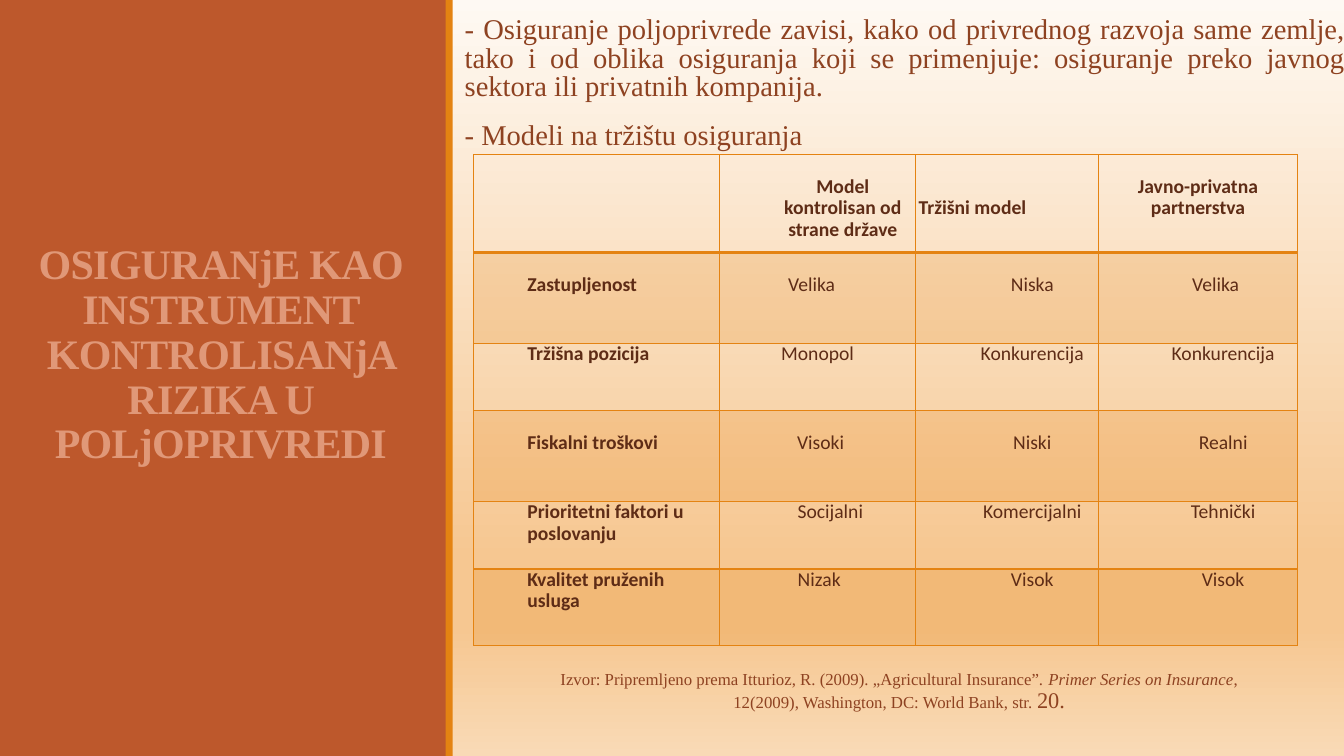
from copy import deepcopy
from dataclasses import dataclass

from lxml import etree
from pptx import Presentation
from pptx.dml.color import RGBColor
from pptx.enum import shapes, text
from pptx.oxml.ns import qn
from pptx.util import Cm, Pt


@dataclass(frozen=True)
class Theme:
    rust: str = "BD582C"
    orange: str = "E48312"
    title: str = "E09878"
    body: str = "8E4221"
    cell: str = "5E2C16"
    gradient: tuple = ((0, "FEF9F3"), (74, "F6C791"), (83, "F6C791"), (100, "F9DAB6"))
    serif: str = "Times New Roman"
    sans: str = "Calibri"
    title_size: float = 30
    body_size: float = 20.4
    source_size: float = 12
    page_size: float = 16
    cell_size: float = 14


@dataclass(frozen=True)
class Area:
    left: float
    top: float
    width: float
    height: float


@dataclass(frozen=True)
class Entry:
    """Cell wording; shift moves its centring area right (or left), in cm."""
    words: str
    shift: float = 1.27
    lines_above: int = 0
    align: text.PP_ALIGN = text.PP_ALIGN.CENTER


THEME = Theme()
LEFT, CENTER = text.PP_ALIGN.LEFT, text.PP_ALIGN.CENTER
CELL_MARGIN = 0.08
LINE_HEIGHT = 0.54
COLUMNS = (6.2, 4.93, 4.62, 5.0)
ROW_HEIGHTS = (2.46, 2.29, 1.7, 2.29, 1.7, 1.93)
PANELS = (
    (Area(0, 0, 11.25, 19.05), THEME.rust),
    (Area(11.23, 0, 0.18, 19.05), THEME.orange),
)


def label(words: str, lines_above: int = 0) -> Entry:
    return Entry(words, 1.27, lines_above, LEFT)


MODELS = (
    (Entry(""), Entry("Model kontrolisan od strane države", 1.27, 1),
     Entry("Tržišni model", 0, 2, LEFT), Entry("Javno-privatna partnerstva", 0, 1)),
    (label("Zastupljenost", 1), Entry("Velika", -0.3, 1),
     Entry("Niska", lines_above=1), Entry("Velika", 0.89, 1)),
    (label("Tržišna pozicija"), Entry("Monopol", 0),
     Entry("Konkurencija"), Entry("Konkurencija")),
    (label("Fiskalni troškovi", 1), Entry("Visoki", 0.15, 1),
     Entry("Niski", lines_above=1), Entry("Realni", lines_above=1)),
    (label("Prioritetni faktori u poslovanju"), Entry("Socijalni", 0.64),
     Entry("Komercijalni"), Entry("Tehnički")),
    (label("Kvalitet pruženih usluga"), Entry("Nizak", 0.08),
     Entry("Visok"), Entry("Visok")),
)


def rgb(color: str) -> RGBColor:
    return RGBColor.from_string(color)


def paint_background(page) -> None:
    fill = page.background.fill
    fill.gradient()
    fill.gradient_angle = 270
    stops = page.element.find(".//" + qn("a:gsLst"))
    pattern = deepcopy(stops[0])
    for stop in list(stops):
        stops.remove(stop)
    for position, color in THEME.gradient:
        stop = deepcopy(pattern)
        stop.set("pos", str(position * 1000))
        for child in list(stop):
            stop.remove(child)
        etree.SubElement(stop, qn("a:srgbClr"), val=color)
        stops.append(stop)


def place(box, area: Area) -> None:
    box.left, box.top = Cm(area.left), Cm(area.top)
    box.width, box.height = Cm(area.width), Cm(area.height)


def add_panel(page, area: Area, color: str) -> None:
    """Put a plain rectangle behind the placeholders."""
    panel = page.shapes.add_shape(
        shapes.MSO_SHAPE.RECTANGLE,
        Cm(area.left), Cm(area.top), Cm(area.width), Cm(area.height))
    panel.shadow.inherit = False
    panel.fill.solid()
    panel.fill.fore_color.rgb = rgb(color)
    panel.line.fill.background()
    page.shapes.title.element.addprevious(panel.element)


def style_font(font, name: str, size: float, color: str, bold: bool = False) -> None:
    font.name, font.size, font.bold = name, Pt(size), bold
    font.color.rgb = rgb(color)


def format_body(para, align: text.PP_ALIGN, spacing: float, indent: float, size: float) -> None:
    para.alignment, para.line_spacing = align, spacing
    para.space_before, para.space_after = Pt(12), Pt(2)
    properties = para._p.get_or_add_pPr()
    properties.set("marL", str(Cm(indent)))
    properties.set("indent", "0")
    etree.SubElement(properties, qn("a:buNone"))
    style_font(para.font, THEME.serif, size, THEME.body)


def open_frame(box, area: Area, anchor: text.MSO_ANCHOR):
    place(box, area)
    frame = box.text_frame
    frame.word_wrap, frame.auto_size = True, text.MSO_AUTO_SIZE.NONE
    frame.vertical_anchor = anchor
    return frame


def write_title(box) -> None:
    frame = open_frame(box, Area(0, -0.86, 11.13, 12.78), text.MSO_ANCHOR.BOTTOM)
    para = frame.paragraphs[0]
    span = para.add_run()
    span.text = "OSIGURANjE KAO INSTRUMENT KONTROLISANjA RIZIKA U POLjOPRIVREDI"
    para.alignment, para.line_spacing = CENTER, 0.89
    style_font(para.font, THEME.serif, THEME.title_size, THEME.title, True)
    span.font._element.set("spc", "-50")


def write_introduction(box) -> None:
    frame = open_frame(box, Area(11.46, 0.28, 22.43, 3.63), text.MSO_ANCHOR.TOP)
    frame.margin_left = frame.margin_right = 0
    frame.text = (
        "- Osiguranje poljoprivrede zavisi, kako od privrednog razvoja same zemlje, "
        "tako i od oblika osiguranja koji se primenjuje: osiguranje preko javnog "
        "sektora ili privatnih kompanija.\n- Modeli na tržištu osiguranja")
    for para, align in zip(frame.paragraphs, (text.PP_ALIGN.JUSTIFY, LEFT)):
        format_body(para, align, 0.84, 0.25, THEME.body_size)


def write_source(box) -> None:
    frame = open_frame(box, Area(13.72, 16.79, 17.88, 3.33), text.MSO_ANCHOR.TOP)
    para = frame.paragraphs[0]
    format_body(para, CENTER, 0.9, 0, THEME.source_size)
    citation = (
        "Izvor: Pripremljeno prema Itturioz, R. (2009). „Agricultural Insurance”. ",
        "Primer Series on Insurance",
        ", 12(2009), Washington, DC: World Bank, str. ",
        "20.",
    )
    for words in citation:
        para.add_run().text = words
    para.runs[1].font.italic = True
    para.runs[3].font.size = Pt(THEME.page_size)


def border_cell(cell, heading: bool, below_heading: bool) -> None:
    properties = cell._tc.get_or_add_tcPr()
    widths = {"lnL": 1, "lnR": 1, "lnT": 2 if below_heading else 1, "lnB": 2 if heading else 1}
    for side, width in widths.items():
        line = etree.SubElement(properties, qn(f"a:{side}"), w=str(Pt(width)))
        solid = etree.SubElement(line, qn("a:solidFill"))
        etree.SubElement(solid, qn("a:srgbClr"), val=THEME.orange)


def fill_cell(cell, shaded: bool) -> None:
    if not shaded:
        cell.fill.background()
        return
    cell.fill.solid()
    cell.fill.fore_color.rgb = rgb(THEME.orange)
    color = cell._tc.tcPr.find(qn("a:solidFill"))[0]
    etree.SubElement(color, qn("a:alpha"), val="20000")


def write_cell(cell, entry: Entry, bold: bool) -> None:
    cell.margin_left = Cm(CELL_MARGIN + max(entry.shift, 0))
    cell.margin_right = Cm(CELL_MARGIN + max(-entry.shift, 0))
    cell.margin_top, cell.margin_bottom = Cm(entry.lines_above * LINE_HEIGHT), 0
    cell.text = entry.words
    para = cell.text_frame.paragraphs[0]
    para.alignment, para.line_spacing = entry.align, 0.9
    style_font(para.font, THEME.sans, THEME.cell_size, THEME.cell, bold)


def add_models_table(page) -> None:
    table = page.shapes.add_table(
        len(MODELS), len(COLUMNS), Cm(11.94), Cm(3.9),
        Cm(sum(COLUMNS)), Cm(sum(ROW_HEIGHTS))).table
    table.first_row = table.horz_banding = False
    for column, width in zip(table.columns, COLUMNS):
        column.width = Cm(width)
    for r, (height, entries) in enumerate(zip(ROW_HEIGHTS, MODELS)):
        table.rows[r].height = Cm(height)
        for c, entry in enumerate(entries):
            cell = table.cell(r, c)
            border_cell(cell, r == 0, r == 1)
            fill_cell(cell, r % 2 == 1)
            write_cell(cell, entry, r == 0 or c == 0)


def main() -> None:
    deck = Presentation()
    deck.slide_width, deck.slide_height = Cm(33.87), Cm(19.05)
    page = deck.slides.add_slide(deck.slide_layouts[3])
    paint_background(page)
    for area, color in PANELS:
        add_panel(page, area, color)
    write_title(page.shapes.title)
    write_introduction(page.placeholders[1])
    write_source(page.placeholders[2])
    add_models_table(page)
    deck.save("out.pptx")


if __name__ == "__main__":
    main()
